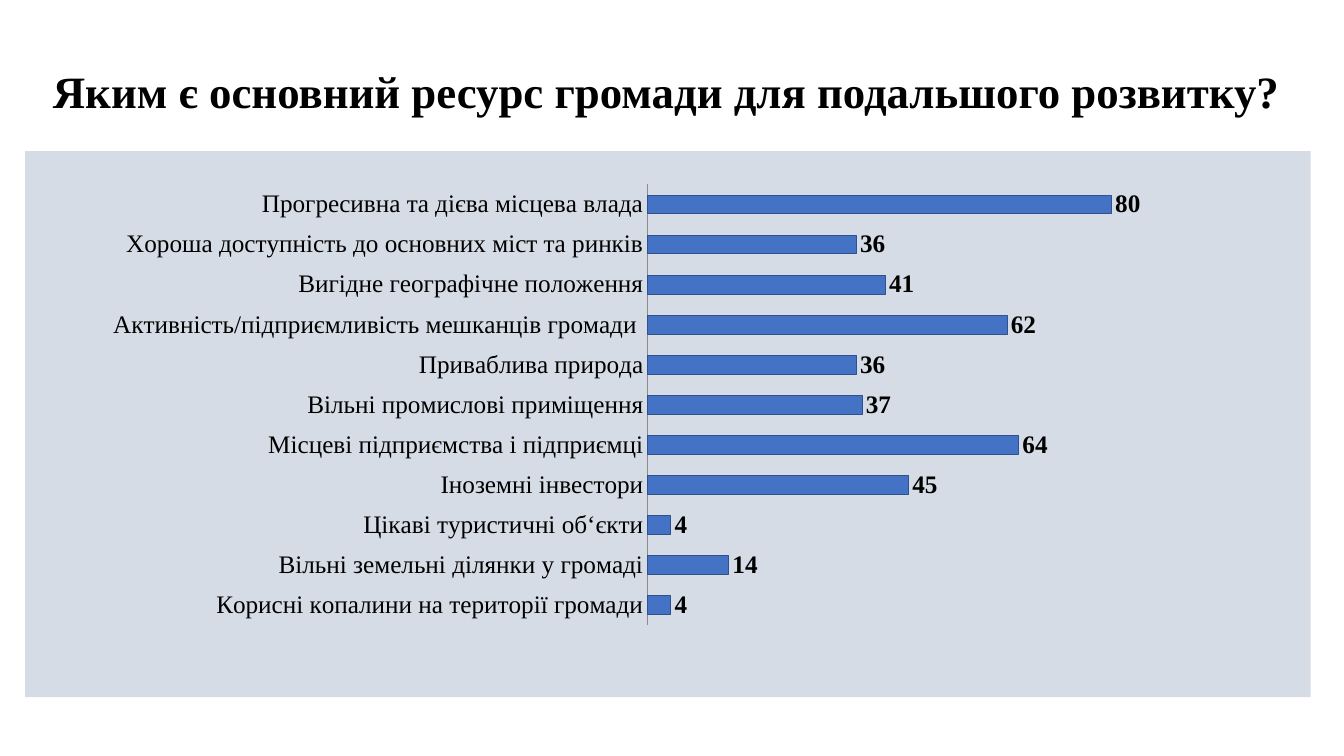
import dataclasses

import pptx
import pptx.chart.data
import pptx.dml.color
import pptx.enum.chart
import pptx.enum.text
import pptx.oxml
import pptx.util

NAMESPACES = (
    'xmlns:c="http://schemas.openxmlformats.org/drawingml/2006/chart" '
    'xmlns:a="http://schemas.openxmlformats.org/drawingml/2006/main"'
)

TITLE = "Яким є основний ресурс громади для подальшого розвитку?"
RESOURCES = [  # bottom bar first
    ("Корисні копалини на території громади", 4),
    ("Вільні земельні ділянки у громаді", 14),
    ("Цікаві туристичні об‘єкти", 4),
    ("Іноземні інвестори", 45),
    ("Місцеві підприємства і підприємці", 64),
    ("Вільні промислові приміщення", 37),
    ("Приваблива природа", 36),
    ("Активність/підприємливість мешканців громади ", 62),
    ("Вигідне географічне положення", 41),
    ("Хороша доступність до основних міст та ринків", 36),
    ("Прогресивна та дієва місцева влада", 80),
]


@dataclasses.dataclass(frozen=True)
class Theme:
    font: str = "Times New Roman"
    title_size: int = 32
    chart_size: int = 18
    text: str = "000000"
    panel: str = "D6DCE5"
    bar: str = "4472C4"
    bar_edge: str = "2F528F"
    axis: str = "8B8B8B"


def rgb(color):
    return pptx.dml.color.RGBColor.from_string(color)


def panel_properties(color):
    """Shape properties with a plain fill and no outline, for a chart area."""
    return pptx.oxml.parse_xml(
        f'<c:spPr {NAMESPACES}><a:solidFill><a:srgbClr val="{color}"/></a:solidFill>'
        "<a:ln><a:noFill/></a:ln></c:spPr>"
    )


def inner_layout(left, top, width, height):
    """Place the inner plot area by shares of the chart's size."""
    shares = "".join(
        f'<c:{name} val="{share}"/>'
        for name, share in zip("xywh", (left, top, width, height))
    )
    return pptx.oxml.parse_xml(
        f'<c:layout {NAMESPACES}><c:manualLayout><c:layoutTarget val="inner"/>'
        f'<c:xMode val="edge"/><c:yMode val="edge"/>{shares}</c:manualLayout></c:layout>'
    )


class SlideBuilder:
    """Places elements on a grid of quarter-inch columns and rows."""

    CELL = 0.25

    def __init__(self, slide, theme):
        self.slide = slide
        self.theme = theme

    def grid(self, *cells):
        return [pptx.util.Inches(cell * self.CELL) for cell in cells]

    def style_font(self, font, size, bold=False):
        font.name = self.theme.font
        font.size = pptx.util.Pt(size)
        font.bold = bold
        font.color.rgb = rgb(self.theme.text)

    def title(self, text, column, row, columns, rows):
        box = self.slide.shapes.add_textbox(*self.grid(column, row, columns, rows))
        frame = box.text_frame
        frame.word_wrap = True
        frame.vertical_anchor = pptx.enum.text.MSO_ANCHOR.BOTTOM
        frame.margin_left = 0
        paragraph = frame.paragraphs[0]
        paragraph.text = text
        paragraph.alignment = pptx.enum.text.PP_ALIGN.CENTER
        paragraph.line_spacing = 0.9
        self.style_font(paragraph.font, self.theme.title_size, bold=True)

    def bar_chart(self, rows_of_data, column, row, columns, rows, maximum, plot_area):
        data = pptx.chart.data.CategoryChartData(number_format="0")
        data.categories = [label for label, _ in rows_of_data]
        data.add_series("Series 1", [value for _, value in rows_of_data])
        chart = self.slide.shapes.add_chart(
            pptx.enum.chart.XL_CHART_TYPE.BAR_CLUSTERED,
            *self.grid(column, row, columns, rows), data,
        ).chart
        chart.has_title = False
        chart.has_legend = False
        self.style_font(chart.font, self.theme.chart_size)
        self.style_axes(chart, maximum)
        self.style_bars(chart.plots[0])
        self.style_areas(chart, plot_area)

    def style_axes(self, chart, maximum):
        category_axis = chart.category_axis
        category_axis.major_tick_mark = pptx.enum.chart.XL_TICK_MARK.NONE
        category_axis.format.line.color.rgb = rgb(self.theme.axis)
        category_axis.format.line.width = pptx.util.Pt(0.75)
        self.style_font(category_axis.tick_labels.font, self.theme.chart_size)
        value_axis = chart.value_axis
        value_axis.minimum_scale = 0
        value_axis.maximum_scale = maximum
        value_axis.has_major_gridlines = False
        value_axis.visible = False

    def style_bars(self, plot):
        plot.gap_width = 115
        plot.overlap = -20
        plot.vary_by_categories = False
        series = plot.series[0]
        series.format.fill.solid()
        series.format.fill.fore_color.rgb = rgb(self.theme.bar)
        series.format.line.color.rgb = rgb(self.theme.bar_edge)
        series.format.line.width = pptx.util.Pt(0.5)
        labels = series.data_labels
        labels.show_value = True
        labels.number_format = "0"
        labels.number_format_is_linked = False
        labels.position = pptx.enum.chart.XL_LABEL_POSITION.OUTSIDE_END
        self.style_font(labels.font, self.theme.chart_size, bold=True)

    def style_areas(self, chart, plot_area):
        chart_space = chart.element
        chart_space.chart.addnext(panel_properties(self.theme.panel))
        plot_element = chart_space.chart.plotArea
        for layout in plot_element.xpath("c:layout"):
            plot_element.remove(layout)
        plot_element.insert(0, inner_layout(*plot_area))
        plot_element.append(panel_properties(self.theme.panel))


def main():
    presentation = pptx.Presentation()
    presentation.slide_width = pptx.util.Inches(13.33)
    presentation.slide_height = pptx.util.Inches(7.5)
    slide = presentation.slides.add_slide(presentation.slide_layouts[6])
    builder = SlideBuilder(slide, Theme())
    builder.title(TITLE, column=1.64, row=1.32, columns=50, rows=3.56)
    builder.bar_chart(
        RESOURCES, column=1, row=6, columns=51, rows=21.67,
        maximum=90, plot_area=(0.484, 0.061, 0.406, 0.807),
    )
    presentation.save("out.pptx")


if __name__ == "__main__":
    main()
